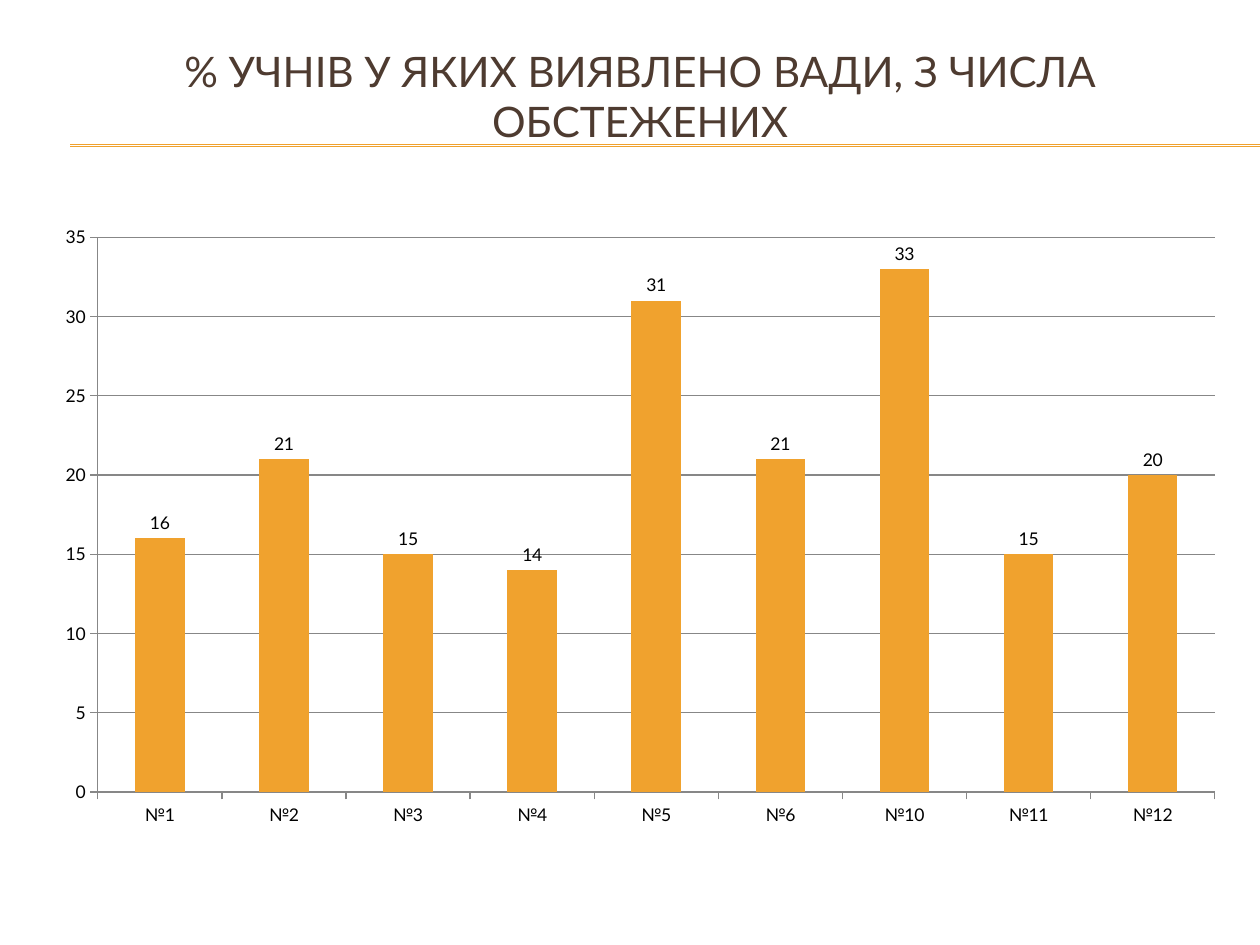
from lxml.etree import SubElement
from pptx import Presentation
from pptx.chart.data import CategoryChartData
from pptx.dml.color import RGBColor
from pptx.enum.chart import XL_CHART_TYPE as ChartType
from pptx.enum.chart import XL_LABEL_POSITION as LabelPosition
from pptx.enum.chart import XL_TICK_MARK as TickMark
from pptx.enum.shapes import MSO_CONNECTOR as Connector
from pptx.enum.text import MSO_ANCHOR as Anchor
from pptx.enum.text import PP_ALIGN as Align
from pptx.oxml.ns import qn
from pptx.util import Cm, Pt

ORANGE = RGBColor(0xF0, 0xA2, 0x2E)
BROWN = RGBColor(0x4E, 0x3B, 0x30)
GRAY = RGBColor(0x87, 0x87, 0x87)
BLACK = RGBColor(0, 0, 0)
FONT = "Lato"

SLIDE_WIDTH, SLIDE_HEIGHT = 25.4, 19.05
HEADING = "% УЧНІВ У ЯКИХ ВИЯВЛЕНО ВАДИ, З ЧИСЛА ОБСТЕЖЕНИХ"
SCHOOL_SHARES = {
    "№1": 16, "№2": 21, "№3": 15, "№4": 14, "№5": 31,
    "№6": 21, "№10": 33, "№11": 15, "№12": 20,
}


def style_font(font, size, color):
    font.name = FONT
    font.size = Pt(size)
    font.bold = False
    font.color.rgb = color


def add_text(slide, text, box, size=24, color=BROWN, align=Align.CENTER,
             anchor=Anchor.MIDDLE, bottom_inset=0.13):
    frame = slide.shapes.add_textbox(*map(Cm, box)).text_frame
    frame.word_wrap = True
    frame.vertical_anchor = anchor
    frame.margin_bottom = Cm(bottom_inset)
    paragraph = frame.paragraphs[0]
    paragraph.alignment = align
    run = paragraph.add_run()
    run.text = text
    style_font(run.font, size, color)


def add_rule(slide, left, right, y):
    rule = slide.shapes.add_connector(
        Connector.STRAIGHT, Cm(left), Cm(y), Cm(right), Cm(y))
    rule.line.color.rgb = ORANGE
    rule.line.width = Pt(0.75)
    SubElement(rule.element.spPr, qn("a:effectLst"))


def add_header(slide, box):
    left, top, width, height = box
    # Double rule running off to the right edge
    for offset in (1.65, 1.68):
        add_rule(slide, left + 0.58, SLIDE_WIDTH, top + offset)
    # The deep bottom inset lifts the heading above the rule
    add_text(slide, HEADING, box, bottom_inset=1.15)


def add_share_chart(slide, box):
    shares = CategoryChartData(number_format="0")
    shares.categories = SCHOOL_SHARES.keys()
    shares.add_series("Series 1", SCHOOL_SHARES.values())
    chart = slide.shapes.add_chart(
        ChartType.COLUMN_CLUSTERED, *map(Cm, box), shares).chart
    chart.has_title = False
    chart.has_legend = False
    style_font(chart.font, 10, BLACK)

    # Columns and their values
    plot = chart.plots[0]
    plot.gap_width = 150
    plot.vary_by_categories = False
    columns = plot.series[0]
    columns.format.fill.solid()
    columns.format.fill.fore_color.rgb = ORANGE
    labels = columns.data_labels
    labels.show_value = True
    labels.number_format = "0"
    labels.number_format_is_linked = False
    labels.position = LabelPosition.OUTSIDE_END
    style_font(labels.font, 10, BLACK)

    # Axes and gridlines
    scale = chart.value_axis
    scale.minimum_scale, scale.maximum_scale, scale.major_unit = 0, 35, 5
    scale.has_major_gridlines = True
    scale.tick_labels.number_format = "0"
    scale.tick_labels.number_format_is_linked = False
    for axis in (chart.category_axis, scale):
        axis.major_tick_mark = TickMark.OUTSIDE
        axis.minor_tick_mark = TickMark.NONE
        style_font(axis.tick_labels.font, 10, BLACK)
    for part in (chart.category_axis, scale, scale.major_gridlines):
        part.format.line.color.rgb = GRAY
        part.format.line.width = Pt(0.75)


def main():
    deck = Presentation()
    deck.slide_width, deck.slide_height = Cm(SLIDE_WIDTH), Cm(SLIDE_HEIGHT)
    slide = deck.slides.add_slide(deck.slide_layouts[6])
    left, width = 0.84, 24.13
    add_header(slide, (left, 1.27, width, 2.34))
    add_share_chart(slide, (left, 4.32, width, 12.57))
    deck.save("out.pptx")


if __name__ == "__main__":
    main()
